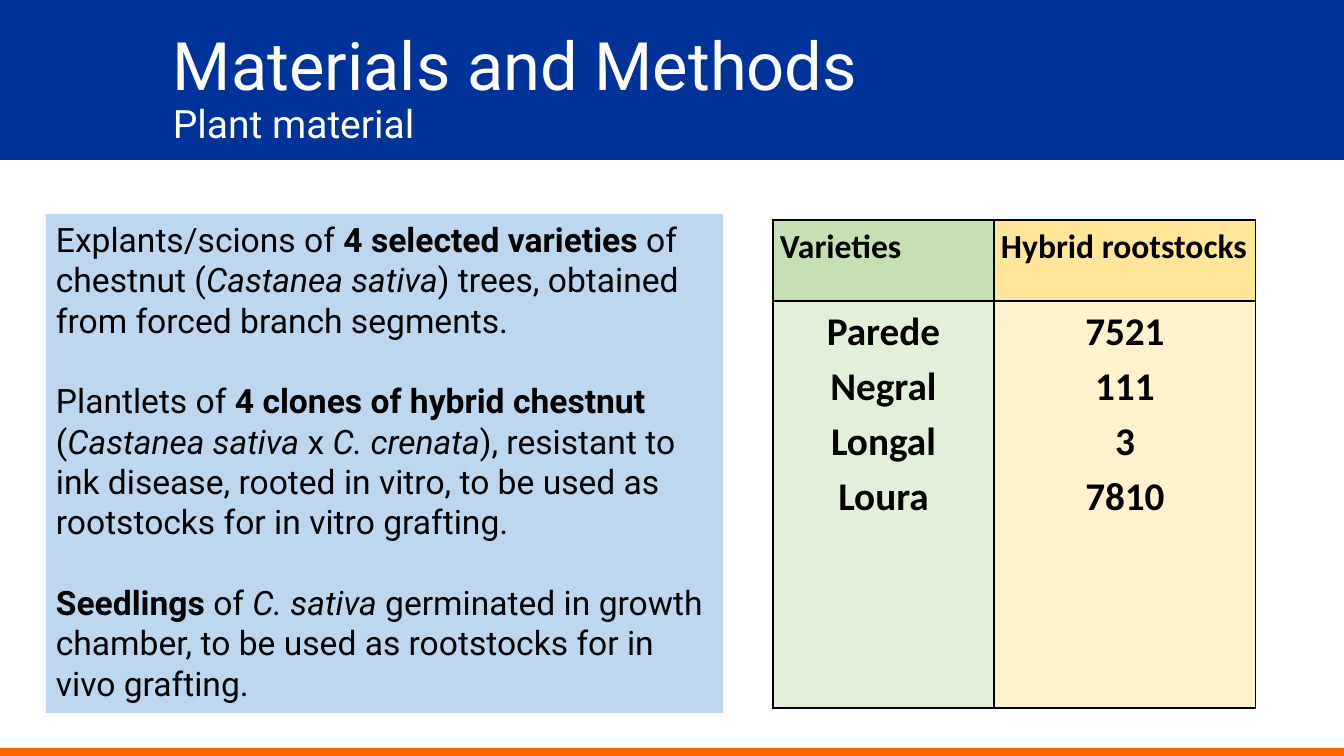
"""Build the plant material slide: heading, description panel and variety table."""
from dataclasses import dataclass

import lxml.etree
import pptx
import pptx.dml.color
import pptx.enum.shapes
import pptx.enum.text
import pptx.oxml.ns
import pptx.util

EMU_PER_PX = 914400 / 100.8
COLOURS = {
    "navy": "003399", "orange": "FF6600", "panel": "BDD7EE",
    "white": "FFFFFF", "black": "000000",
    "green": "C5E0B4", "pale green": "E2F0D9",
    "yellow": "FFE699", "pale yellow": "FFF2CC",
}


@dataclass(frozen=True)
class Box:
    left: int
    top: int
    width: int
    height: int
    fill: str = ""


@dataclass(frozen=True)
class Span:
    text: str
    bold: bool = False
    italic: bool = False


@dataclass(frozen=True)
class Column:
    heading: str
    entries: tuple[str, ...]
    width: int
    heading_fill: str
    body_fill: str


SLIDE = Box(0, 0, 1344, 756)
BANNER = Box(0, 0, 1344, 160, "navy")
FOOTER = Box(0, 748, 1344, 8, "orange")
TITLE = Box(163, 40, 952, 99)
PANEL = Box(46, 214, 677, 499, "panel")
TABLE = Box(773, 220, 483, 488)
ROW_HEIGHTS = (81, 407)
DESCRIPTION = (
    (
        Span("Explants/scions of "),
        Span("4 selected varieties ", bold=True),
        Span("of chestnut ("),
        Span("Castanea sativa", italic=True),
        Span(") trees, obtained from forced branch segments."),
    ),
    (
        Span("Plantlets of "),
        Span("4 clones of hybrid chestnut ", bold=True),
        Span("("),
        Span("Castanea sativa", italic=True),
        Span(" x "),
        Span("C. crenata", italic=True),
        Span("), resistant to ink disease, rooted in vitro, "
             "to be used as rootstocks for in vitro grafting."),
    ),
    (
        Span("Seedlings", bold=True),
        Span(" of "),
        Span("C. sativa ", italic=True),
        Span("germinated in growth chamber, "
             "to be used as rootstocks for in vivo grafting."),
    ),
)
COLUMNS = (
    Column("Varieties", ("Parede", "Negral", "Longal", "Loura"),
           221, "green", "pale green"),
    Column("Hybrid rootstocks", ("7521", "111", "3", "7810"),
           262, "yellow", "pale yellow"),
)


def px(length: int) -> pptx.util.Emu:
    return pptx.util.Emu(round(length * EMU_PER_PX))


def frame(box: Box) -> tuple[pptx.util.Emu, ...]:
    return px(box.left), px(box.top), px(box.width), px(box.height)


def rgb(colour: str) -> pptx.dml.color.RGBColor:
    return pptx.dml.color.RGBColor.from_string(COLOURS[colour])


def set_font(font, name: str, size: float, colour: str) -> None:
    font.name = name
    font.size = pptx.util.Pt(size)
    font.color.rgb = rgb(colour)


def add_rectangle(page, box: Box):
    shape = page.shapes.add_shape(
        pptx.enum.shapes.MSO_SHAPE.RECTANGLE, *frame(box))
    shape.shadow.inherit = False
    shape.fill.solid()
    shape.fill.fore_color.rgb = rgb(box.fill)
    shape.line.fill.background()
    return shape


def add_title(page) -> None:
    text = page.shapes.add_textbox(*frame(TITLE)).text_frame
    text.word_wrap = True
    text.vertical_anchor = pptx.enum.text.MSO_ANCHOR.MIDDLE
    para = text.paragraphs[0]
    para.line_spacing = 0.9
    set_font(para.font, "Roboto", 47.7, "white")
    heading = para.add_run()
    heading.text = "Materials and Methods"
    set_font(heading.font, "Roboto", 47.7, "white")
    para.add_line_break()
    subheading = para.add_run()
    subheading.text = "Plant material"
    set_font(subheading.font, "Roboto", 27.9, "white")


def add_description(page) -> None:
    text = add_rectangle(page, PANEL).text_frame
    text.word_wrap = True
    text.vertical_anchor = pptx.enum.text.MSO_ANCHOR.TOP
    for index, spans in enumerate(DESCRIPTION):
        para = text.add_paragraph() if index else text.paragraphs[0]
        para.alignment = pptx.enum.text.PP_ALIGN.LEFT
        para.space_before = pptx.util.Pt(28.8 if index else 0)
        set_font(para.font, "Roboto", 24, "black")
        for span in spans:
            run = para.add_run()
            run.text = span.text
            run.font.bold = span.bold
            run.font.italic = span.italic


def add_borders(cell) -> None:
    qn = pptx.oxml.ns.qn
    properties = cell._tc.get_or_add_tcPr()
    for position, side in enumerate(("lnL", "lnR", "lnT", "lnB")):
        line = lxml.etree.Element(qn(f"a:{side}"), w=str(pptx.util.Pt(1)))
        fill = lxml.etree.SubElement(line, qn("a:solidFill"))
        lxml.etree.SubElement(fill, qn("a:srgbClr"), val=COLOURS["black"])
        properties.insert(position, line)


def fill_cell(cell, lines: tuple[str, ...], size: int, fill: str, align) -> None:
    cell.margin_left = cell.margin_right = px(7)
    cell.margin_top = cell.margin_bottom = 0
    cell.fill.solid()
    cell.fill.fore_color.rgb = rgb(fill)
    add_borders(cell)
    cell.text_frame.text = "\n".join(lines)
    for para in cell.text_frame.paragraphs:
        para.alignment = align
        para.line_spacing = 1.15
        set_font(para.font, "Calibri", size, "black")
        para.font.bold = True


def add_variety_table(page) -> None:
    align = pptx.enum.text.PP_ALIGN
    table = page.shapes.add_table(
        len(ROW_HEIGHTS), len(COLUMNS), *frame(TABLE)).table
    table.first_row = table.horz_banding = False
    for row, height in zip(table.rows, ROW_HEIGHTS):
        row.height = px(height)
    for index, column in enumerate(COLUMNS):
        table.columns[index].width = px(column.width)
        fill_cell(table.cell(0, index), (column.heading,), 24,
                  column.heading_fill, align.LEFT)
        fill_cell(table.cell(1, index), column.entries, 28,
                  column.body_fill, align.CENTER)


def main() -> None:
    deck = pptx.Presentation()
    deck.slide_width, deck.slide_height = px(SLIDE.width), px(SLIDE.height)
    page = deck.slides.add_slide(deck.slide_layouts[6])
    for bar in (BANNER, FOOTER):
        add_rectangle(page, bar)
    add_title(page)
    add_description(page)
    add_variety_table(page)
    deck.save("out.pptx")


if __name__ == "__main__":
    main()
